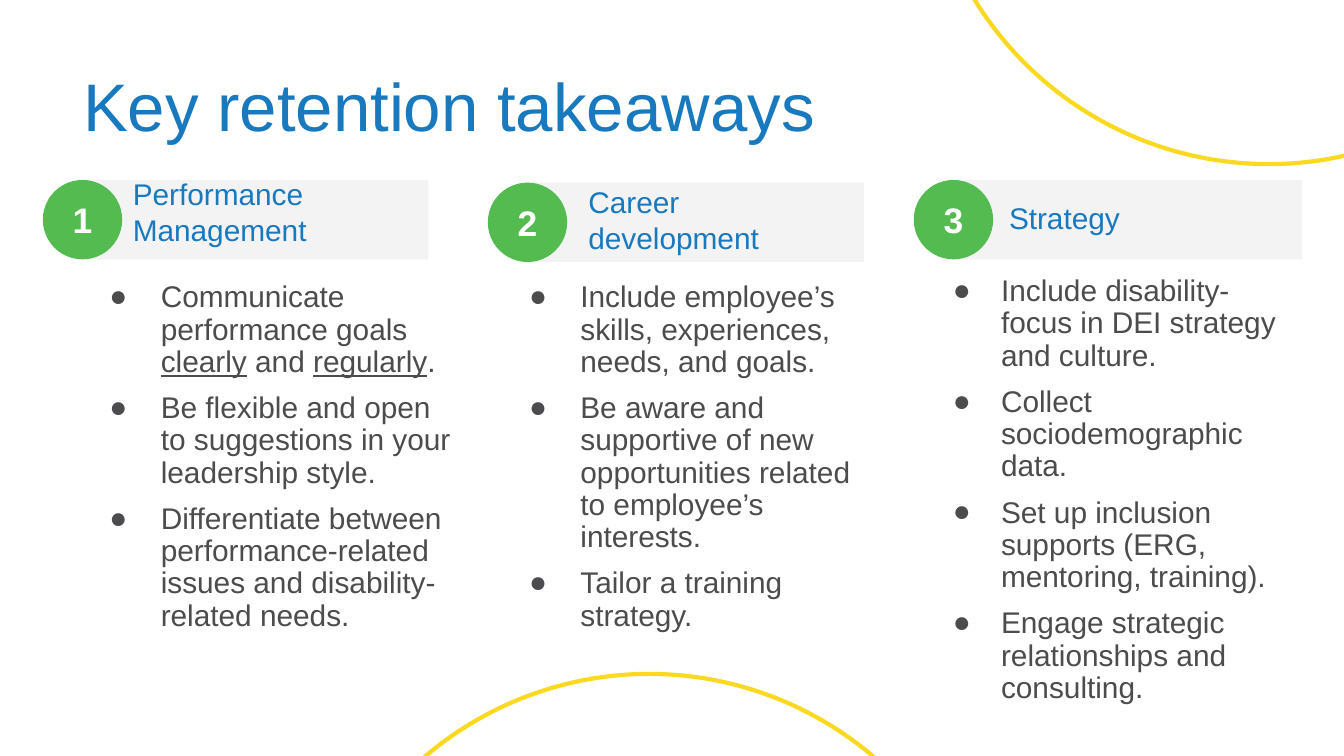
from lxml import etree
from pptx import Presentation
from pptx import util as u
from pptx.dml.color import RGBColor
from pptx.enum import shapes, text
from pptx.oxml.ns import qn

BLUE, GREEN, YELLOW = "1979BE", "53BB50", "FAD920"
PALE, GREY, WHITE = "F3F3F3", "4C4C4E", "FFFFFF"
FONT = "Arial"


def color(value):
    return RGBColor.from_string(value)


def add_span(para, words, size, shade):
    span = para.add_run()
    span.text = words
    span.font.name = FONT
    span.font.size = u.Pt(size)
    span.font.color.rgb = color(shade)
    return span


deck = Presentation()
deck.slide_width, deck.slide_height = u.Cm(25.4), u.Cm(14.28)
page = deck.slides.add_slide(deck.slide_layouts[6])

# Title
box = page.shapes.add_textbox(u.Cm(1.32), u.Cm(0.69), u.Cm(21.9), u.Cm(2.77))
box.text_frame.word_wrap = True
box.text_frame.vertical_anchor = text.MSO_ANCHOR.MIDDLE
para = box.text_frame.paragraphs[0]
para.line_spacing = 0.9
add_span(para, "Key retention takeaways", 36, BLUE)

# Columns: places are left, top, width, height in cm.
# Underscores in a bullet mark underlined words.
columns = [
    {
        "bar": (1.55, 3.4, 6.55, 1.5),
        "circle": (0.81, 3.4, 1.5, 1.5),
        "heading": (2.26, 3.25, 5.8, 1.5),
        "body": (1.52, 5.08, 7.42, 8.51),
        "inset": 0.25,
        "hanging": 0.97,
        "lines": ["Performance", "Management"],
        "bullets": [
            "Communicate performance goals _clearly_ and _regularly_.",
            "Be flexible and open to suggestions in your leadership style.",
            "Differentiate between performance-related issues and disability-related needs.",
        ],
    },
    {
        "bar": (10.11, 3.45, 6.22, 1.5),
        "circle": (9.22, 3.45, 1.5, 1.5),
        "heading": (10.87, 3.4, 5.43, 1.5),
        "body": (9.45, 5.08, 7.47, 7.59),
        "inset": 0.25,
        "hanging": 0.97,
        "lines": ["Career development"],
        "bullets": [
            "Include employee’s skills, experiences, needs, and goals.",
            "Be aware and supportive of new opportunities related to employee’s interests.",
            "Tailor a training strategy.",
        ],
    },
    {
        "bar": (18.01, 3.4, 6.6, 1.5),
        "circle": (17.27, 3.4, 1.5, 1.5),
        "heading": (18.82, 3.23, 5, 1.75),
        "body": (17.4, 5.08, 7.29, 7.21),
        "inset": 0.13,
        "hanging": 0.91,
        "lines": ["Strategy"],
        "bullets": [
            "Include disability- focus in DEI strategy and culture.",
            "Collect sociodemographic data.",
            "Set up inclusion supports (ERG, mentoring, training).",
            "Engage strategic relationships and consulting.",
        ],
    },
]

for number, column in enumerate(columns, 1):
    # Heading bar
    bar = page.shapes.add_shape(shapes.MSO_SHAPE.RECTANGLE, *map(u.Cm, column["bar"]))
    bar.shadow.inherit = False
    bar.fill.solid()
    bar.fill.fore_color.rgb = color(PALE)
    bar.line.fill.background()

    # Numbered circle
    circle = page.shapes.add_shape(shapes.MSO_SHAPE.OVAL, *map(u.Cm, column["circle"]))
    circle.shadow.inherit = False
    circle.fill.solid()
    circle.fill.fore_color.rgb = color(GREEN)
    circle.line.fill.background()
    frame = circle.text_frame
    frame.margin_left = frame.margin_right = frame.margin_top = frame.margin_bottom = 0
    frame.vertical_anchor = text.MSO_ANCHOR.MIDDLE
    para = frame.paragraphs[0]
    para.alignment = text.PP_ALIGN.CENTER
    add_span(para, str(number), 19, WHITE).font.bold = True

    # Heading
    frame = page.shapes.add_textbox(*map(u.Cm, column["heading"])).text_frame
    frame.word_wrap = True
    frame.margin_top = frame.margin_bottom = 0
    frame.vertical_anchor = text.MSO_ANCHOR.MIDDLE
    para = frame.paragraphs[0]
    for index, line in enumerate(column["lines"]):
        if index:
            para.add_line_break()
        add_span(para, line, 16, BLUE)

    # Bullets
    frame = page.shapes.add_textbox(*map(u.Cm, column["body"])).text_frame
    frame.word_wrap = True
    frame.margin_top = frame.margin_bottom = u.Cm(column["inset"])
    for index, bullet in enumerate(column["bullets"]):
        para = frame.add_paragraph() if index else frame.paragraphs[0]
        para.line_spacing = 0.9
        para.space_before = u.Pt(7.5 if index else 0)
        properties = para._p.get_or_add_pPr()
        properties.set("marL", str(u.Cm(1.27)))
        properties.set("indent", str(-u.Cm(column["hanging"])))
        bullet_color = etree.SubElement(properties, qn("a:buClr"))
        etree.SubElement(bullet_color, qn("a:srgbClr"), val=GREY)
        etree.SubElement(properties, qn("a:buFont"), typeface=FONT)
        etree.SubElement(properties, qn("a:buChar"), char="●")
        for part, words in enumerate(bullet.split("_")):
            span = add_span(para, words, 16, GREY)
            if part % 2:
                span.font.underline = True

# Yellow rings running off the page
for left, top in [(17.45, -9.96), (5.74, 12.73)]:
    ring = page.shapes.add_shape(
        shapes.MSO_SHAPE.OVAL, u.Cm(left), u.Cm(top), u.Cm(13.06), u.Cm(13.06)
    )
    ring.shadow.inherit = False
    ring.fill.background()
    ring.line.color.rgb = color(YELLOW)
    ring.line.width = u.Pt(2.25)

deck.save("out.pptx")
